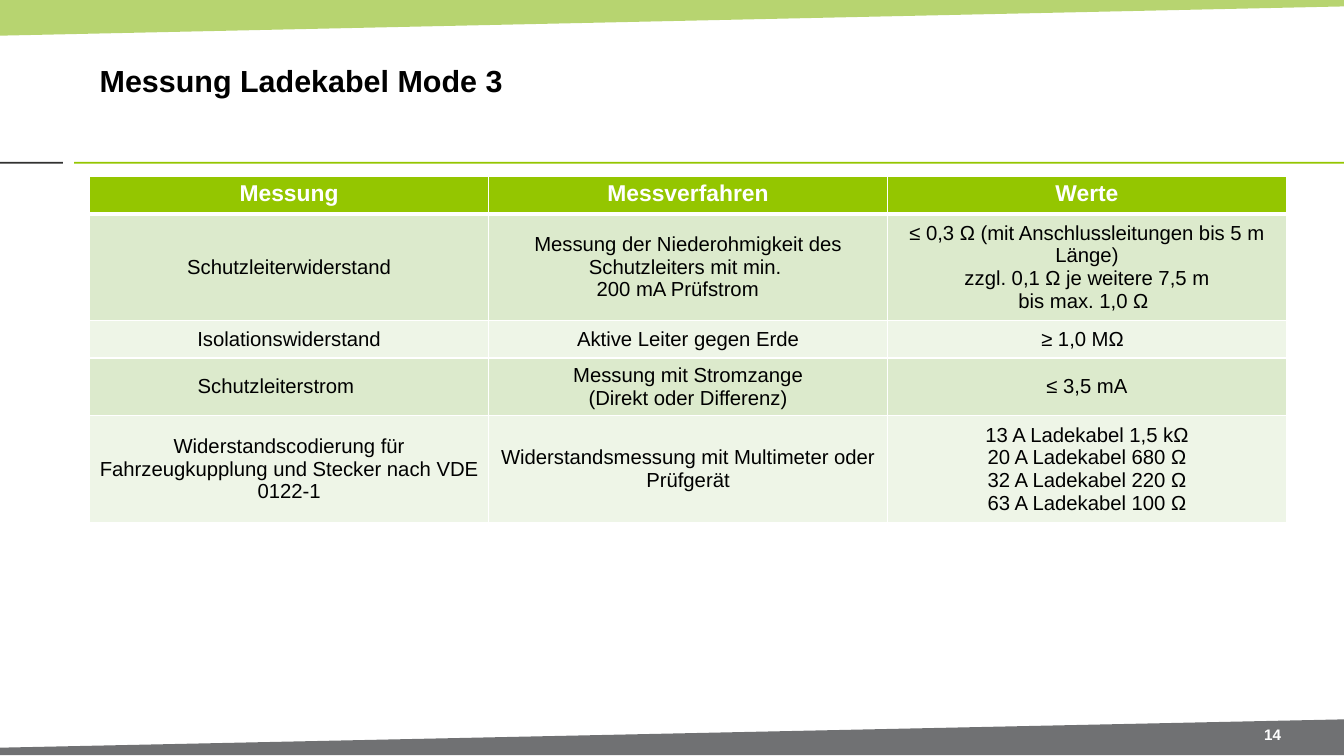
from lxml import etree
from pptx import Presentation
from pptx.dml.color import RGBColor
from pptx.enum.shapes import MSO_SHAPE
from pptx.enum.text import MSO_ANCHOR, PP_ALIGN
from pptx.oxml.ns import qn
from pptx.util import Inches, Pt

RECT = MSO_SHAPE.RECTANGLE
TOP, MIDDLE = MSO_ANCHOR.TOP, MSO_ANCHOR.MIDDLE
LEFT, CENTER = PP_ALIGN.LEFT, PP_ALIGN.CENTER

GREEN, DARK, GRAY = "94C600", "313130", "707173"
WHITE, BLACK = "FFFFFF", "000000"
BANDS = ["DCEACC", "EEF5E7"]

TITLE = {"size": Pt(24), "bold": True, "name": "Arial"}
NUMBER = {"size": Pt(12), "bold": True, "name": "Arial"}
HEAD = {"size": Pt(18), "bold": True, "name": "Arial"}
BODY = {"size": Pt(16), "bold": False, "name": "Arial"}

EDGE = 6.67
HEIGHTS = [4.96, 13.06, 4.96, 7.26, 13.06]
ROWS = [
    ["Messung", "Messverfahren", "Werte"],
    ["Schutzleiterwiderstand",
     "Messung der Niederohmigkeit des Schutzleiters mit min. \n200 mA Prüfstrom\t",
     "≤ 0,3 Ω (mit Anschlussleitungen bis 5 m Länge)\n"
     "zzgl. 0,1 Ω je weitere 7,5 m\nbis max. 1,0 Ω\t"],
    ["Isolationswiderstand", "Aktive Leiter gegen Erde", "≥ 1,0 MΩ\t"],
    ["Schutzleiterstrom\t",
     "Messung mit Stromzange\n(Direkt oder Differenz)", "≤ 3,5 mA"],
    ["Widerstandscodierung für Fahrzeugkupplung und Stecker nach VDE 0122-1",
     "Widerstandsmessung mit Multimeter oder Prüfgerät",
     "13 A Ladekabel 1,5 kΩ\n20 A Ladekabel 680 Ω\n"
     "32 A Ladekabel 220 Ω\n63 A Ladekabel 100 Ω"],
]


def rgb(code):
    return RGBColor.from_string(code)


class Page:
    """Draws on one slide; lengths are percent of its width or height."""

    def __init__(self, deck):
        self.wide, self.high = deck.slide_width, deck.slide_height
        self.shapes = deck.slides.add_slide(deck.slide_layouts[6]).shapes

    def x(self, part):
        return round(self.wide * part / 100)

    def y(self, part):
        return round(self.high * part / 100)

    def box(self, left, top, width, height):
        return self.x(left), self.y(top), self.x(width), self.y(height)

    def paint(self, shape, color):
        shape.shadow.inherit = False
        shape.fill.solid()
        shape.fill.fore_color.rgb = rgb(color)
        shape.line.fill.background()

    def bar(self, place, color):
        self.paint(self.shapes.add_shape(RECT, *self.box(*place)), color)

    def wedge(self, points, color, alpha=100):
        spots = [(self.x(a), self.y(b)) for a, b in points]
        outline = self.shapes.build_freeform(*spots[0])
        outline.add_line_segments(spots[1:], close=True)
        shape = outline.convert_to_shape()
        self.paint(shape, color)
        if alpha < 100:
            tint = shape.element.spPr.find(".//" + qn("a:srgbClr"))
            etree.SubElement(tint, qn("a:alpha"), val=str(alpha * 1000))

    def put(self, frame, text, font, color, align):
        """Fill a text frame, one paragraph a line."""
        frame.word_wrap = True
        frame.text = text
        for para in frame.paragraphs:
            para.alignment = align
            for run in para.runs:
                for key, value in font.items():
                    setattr(run.font, key, value)
                run.font.color.rgb = rgb(color)

    def label(self, place, text, font, color, align):
        frame = self.shapes.add_textbox(*self.box(*place)).text_frame
        frame.vertical_anchor = MIDDLE
        frame.margin_left = frame.margin_right = Inches(0.11)
        frame.margin_top = frame.margin_bottom = Inches(0.06)
        self.put(frame, text, font, color, align)

    def border(self, cell, widths):
        """Set white left, right, top and bottom lines, in points."""
        props = cell._tc.get_or_add_tcPr()
        for side, width in zip("LRTB", widths):
            line = etree.SubElement(props, qn("a:ln" + side), w=str(Pt(width)))
            fill = etree.SubElement(line, qn("a:solidFill"))
            etree.SubElement(fill, qn("a:srgbClr"), val=WHITE)

    def table(self, left, top, width, heights, rows):
        place = self.box(left, top, width, sum(heights))
        grid = self.shapes.add_table(len(rows), len(rows[0]), *place).table
        for row, height in zip(grid.rows, heights):
            row.height = self.y(height)
        for r, texts in enumerate(rows):
            head = r == 0
            color = GREEN if head else BANDS[(r - 1) % 2]
            for c, text in enumerate(texts):
                cell = grid.cell(r, c)
                self.border(cell, [1, 1, 3 if r == 1 else 1, 3 if head else 1])
                cell.fill.solid()
                cell.fill.fore_color.rgb = rgb(color)
                cell.vertical_anchor = TOP if head else MIDDLE
                self.put(cell.text_frame, text, HEAD if head else BODY,
                         WHITE if head else BLACK, CENTER)


def main():
    deck = Presentation()
    deck.slide_width, deck.slide_height = Inches(14.7), Inches(8.27)
    page = Page(deck)
    page.wedge([(0, 0), (100, 0), (100, 0.85), (0, 4.72)], "95C02A", 67)
    page.bar((0, 21.4, 4.69, 0.26), DARK)
    page.bar((5.51, 21.4, 94.49, 0.26), GREEN)
    page.wedge([(100, 99.9), (0, 99.9), (0, 98.91), (100, 95.16)], GRAY)
    page.label((EDGE, 3.39, 78.5, 14.39), "Messung Ladekabel Mode 3",
               TITLE, BLACK, LEFT)
    page.label((91.77, 95.41, 5.85, 3.51), "14", NUMBER, WHITE, CENTER)
    page.table(EDGE, 23.34, 89.05, HEIGHTS, ROWS)
    deck.save("out.pptx")


if __name__ == "__main__":
    main()
